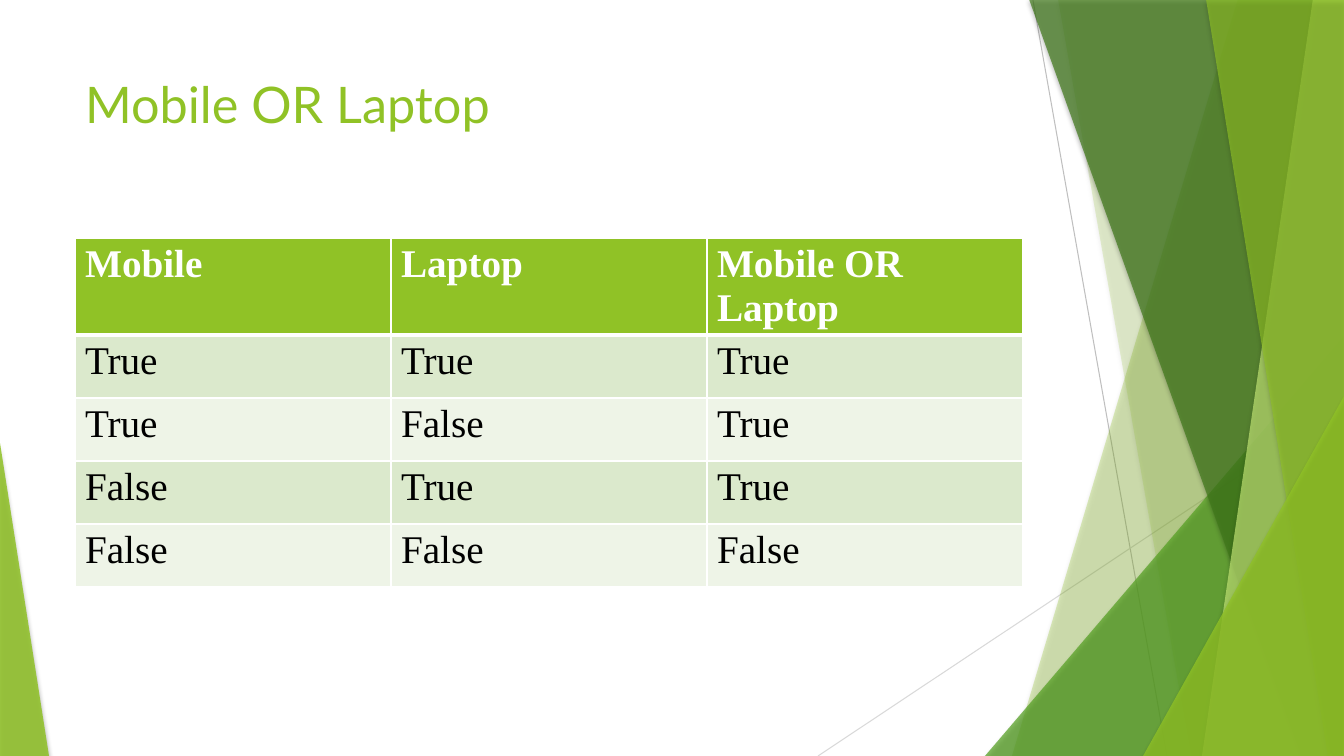
from lxml.etree import SubElement
from pptx import Presentation
from pptx.dml.color import RGBColor
from pptx.enum.shapes import MSO_CONNECTOR, MSO_SHAPE
from pptx.enum.text import MSO_ANCHOR, PP_ALIGN
from pptx.oxml.ns import qn
from pptx.util import Pt

WIDTH, HEIGHT = 1344, 756
EMU_PER_PX = 914400 / 100.8
GREEN, WHITE, BLACK = "90C226", "FFFFFF", "000000"
BANDS = ("DBE9CC", "EEF4E7")

# Top x, bottom x, colour and opacity of each band that runs to the right edge
BACK_BANDS = [(1238, 1012, GREEN, 30), (1058, 1191, GREEN, 20)]
FRONT_BANDS = [(1029, 1301, "3F7819", 70), (1313, 1202, "C0E474", 70), (1206, 1328, GREEN, 65)]

TRUTH_TABLE = [
    ("Mobile", "Laptop", "Mobile OR Laptop"),
    ("True", "True", "True"),
    ("True", "False", "True"),
    ("False", "True", "True"),
    ("False", "False", "False"),
]


def px(length):
    return round(length * EMU_PER_PX)


def colour(value):
    return RGBColor.from_string(value)


def write(frame, text, *, font, size, color, bold=False):
    para = frame.paragraphs[0]
    para.alignment = PP_ALIGN.LEFT
    span = para.add_run()
    span.text = text
    span.font.name = font
    span.font.size = Pt(size)
    span.font.bold = bold
    span.font.color.rgb = colour(color)


def add_solid(parent, color, opacity=100):
    """Append a solid fill to a line element."""
    fill = SubElement(parent, qn("a:solidFill"))
    SubElement(fill, qn("a:srgbClr"), val=color)


class Slide:
    def __init__(self, deck):
        self.page = deck.slides.add_slide(deck.slide_layouts[5])
        self.shapes = self.page.shapes
        self.title_font = "Lato"
        self.table_font = "Times New Roman"

    def line(self, start, end, color):
        line = self.shapes.add_connector(MSO_CONNECTOR.STRAIGHT, *map(px, start + end))
        line.line.color.rgb = colour(color)
        line.line.width = Pt(0.75)
        SubElement(line._element.spPr, qn("a:effectLst"))

    def glass(self, shape, color, opacity):
        """Give a shape a translucent fill, no outline and a soft shadow."""
        shape.fill.solid()
        shape.fill.fore_color.rgb = colour(color)
        shape.line.fill.background()
        shape.shadow.inherit = False
        properties = shape._element.spPr
        fill_color = properties.find(qn("a:solidFill")).find(qn("a:srgbClr"))
        SubElement(fill_color, qn("a:alpha"), val=str(opacity * 1000))
        shadow = SubElement(properties.find(qn("a:effectLst")), qn("a:outerShdw"),
                            blurRad=str(Pt(3)), dist=str(Pt(2)), dir="5400000", rotWithShape="0")
        shadow_color = SubElement(shadow, qn("a:srgbClr"), val=BLACK)
        SubElement(shadow_color, qn("a:alpha"), val="35000")

    def band(self, top_x, bottom_x, color, opacity):
        builder = self.shapes.build_freeform(top_x, -1, scale=EMU_PER_PX)
        builder.add_line_segments([(WIDTH, -1), (WIDTH, HEIGHT), (bottom_x, HEIGHT)], close=True)
        self.glass(builder.convert_to_shape(), color, opacity)

    def corner(self, left, top, right, apex, color, opacity):
        """Draw a triangle on the bottom edge, its apex at 0 (left) or 1 (right)."""
        shape = self.shapes.add_shape(MSO_SHAPE.ISOSCELES_TRIANGLE, px(left), px(top),
                                      px(right - left), px(HEIGHT - top))
        shape.adjustments[0] = apex
        self.glass(shape, color, opacity)

    def title(self, text, left, top, width, height):
        box = self.shapes.title
        box.left, box.top, box.width, box.height = map(px, (left, top, width, height))
        box.text_frame.vertical_anchor = MSO_ANCHOR.TOP
        write(box.text_frame, text, font=self.title_font, size=36, color=GREEN)
        box.element.getparent().append(box.element)

    def borders(self, cell, widths):
        properties = cell._tc.get_or_add_tcPr()
        for side, width in widths.items():
            add_solid(SubElement(properties, qn("a:ln" + side), w=str(Pt(width))), WHITE)

    def table(self, rows, left, top, column_width, row_heights):
        frame = self.shapes.add_table(len(rows), len(rows[0]), px(left), px(top),
                                      px(column_width * len(rows[0])), px(sum(row_heights)))
        grid = frame.table
        for column in grid.columns:
            column.width = px(column_width)
        for index, (texts, height) in enumerate(zip(rows, row_heights)):
            grid.rows[index].height = px(height)
            header = index == 0
            for cell, text in zip(grid.rows[index].cells, texts):
                self.borders(cell, {"L": 0.96, "R": 0.96, "T": 3 if index == 1 else 0.96,
                                    "B": 3 if header else 0.96})
                cell.fill.solid()
                cell.fill.fore_color.rgb = colour(GREEN if header else BANDS[(index - 1) % 2])
                write(cell.text_frame, text, font=self.table_font, size=28,
                      color=WHITE if header else BLACK, bold=header)


def main():
    deck = Presentation()
    deck.slide_width, deck.slide_height = px(WIDTH), px(HEIGHT)
    slide = Slide(deck)
    slide.line((1033, 0), (1167, HEIGHT), "BFBFBF")
    slide.line((WIDTH, 406), (818, HEIGHT), "D9D9D9")
    for band in BACK_BANDS:
        slide.band(*band)
    slide.corner(985, 336, WIDTH, 1, "54A021", 72)
    for band in FRONT_BANDS:
        slide.band(*band)
    slide.corner(1143, 396, WIDTH, 1, GREEN, 80)
    slide.corner(0, 443, 49, 0, GREEN, 85)
    slide.title("Mobile OR Laptop", 75, 68, 948, 145)
    slide.table(TRUTH_TABLE, 75, 238, 316, [97, 63, 63, 63, 63])
    deck.save("out.pptx")


if __name__ == "__main__":
    main()
